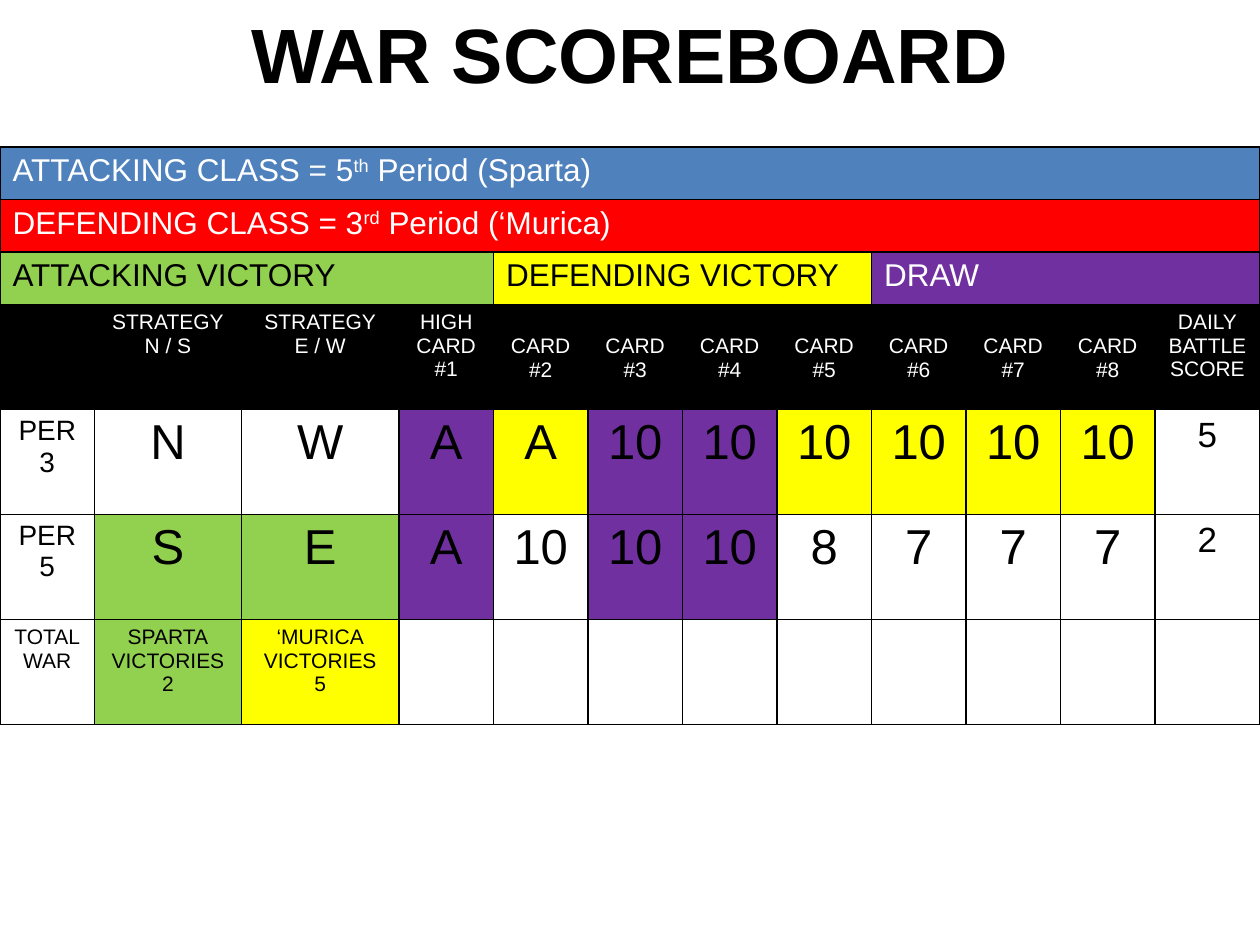
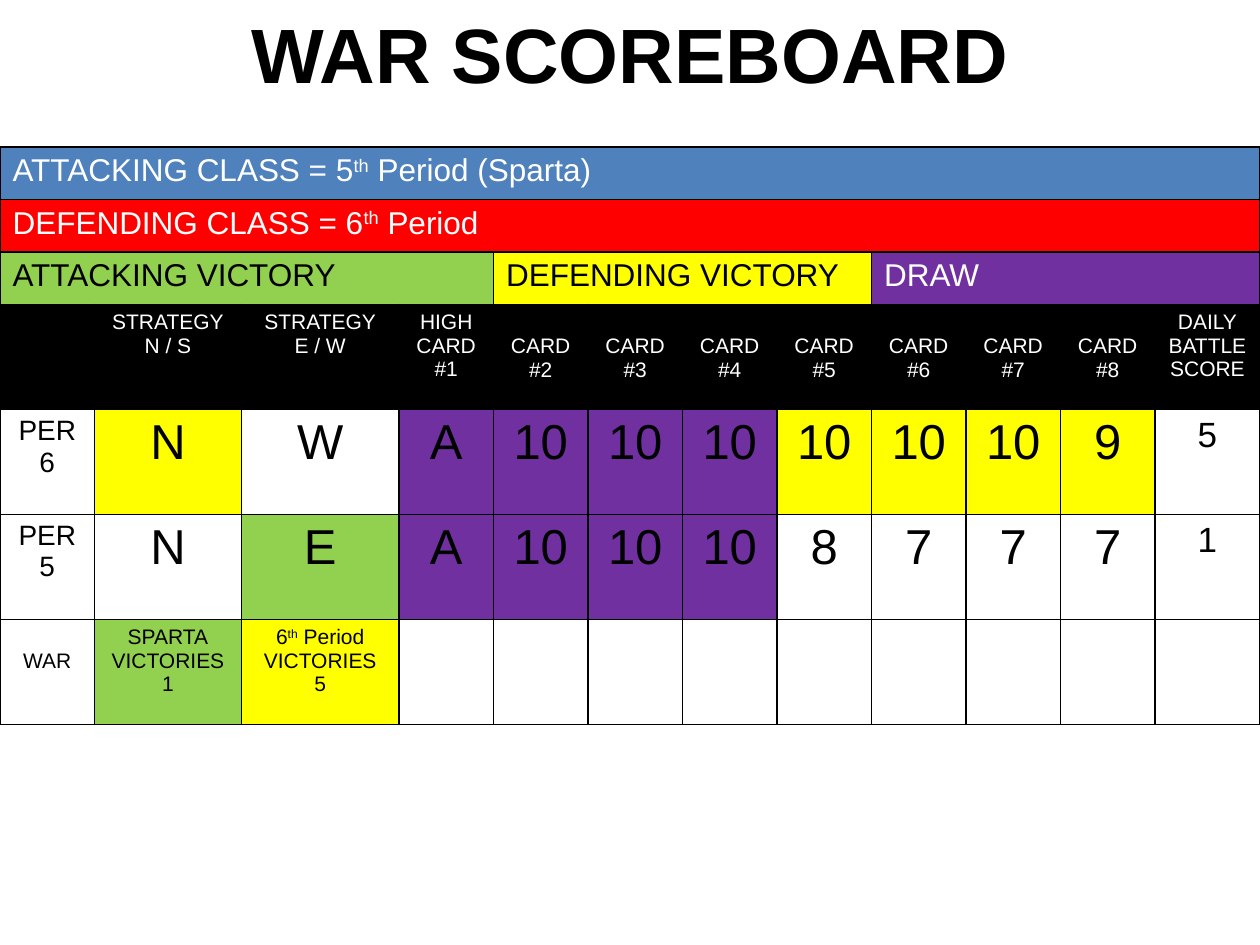
import pptx
import pptx.dml.color
import pptx.enum.text
import pptx.oxml
import pptx.oxml.ns
import pptx.util

PX = 7620
FONT = "Arial"
BLACK, WHITE, BLUE, RED = "000000", "FFFFFF", "4F81BD", "FF0000"
GREEN, YELLOW, PURPLE = "92D050", "FFFF00", "7030A0"
MARKS = {".": None, "G": GREEN, "Y": YELLOW, "P": PURPLE}
CENTER = pptx.enum.text.PP_ALIGN.CENTER
LEFT = pptx.enum.text.PP_ALIGN.LEFT

TITLE_BOX = (0, 0, 1200, 100)
BOARD_BOX = (0, 140, 1200, 550)
COLS = [90, 140, 150] + [90] * 8 + [100]
ROWS = [50] * 3 + [100] * 4
CELL_TOP, LINE = 6, 23
HEADINGS = (["", "STRATEGY\nN / S", "STRATEGY\nE / W", "HIGH\nCARD\n#1"]
            + [f"CARD\n#{n}" for n in range(2, 9)]
            + ["DAILY\nBATTLE\nSCORE"])

MATCHES = [
    {
        "attacker": "5^th^ Period (Sparta)",
        "defender": "3^rd^ Period (‘Murica)",
        "scores": [
            ("PER\n3", "N W A A 10 10 10 10 10 10", 5, "...PYPPYYYY."),
            ("PER\n5", "S E A 10 10 10 8 7 7 7", 2, ".GGP.PP....."),
        ],
        "total": ["TOTAL\nWAR", "SPARTA\nVICTORIES\n2", "‘MURICA\nVICTORIES\n5"],
        "total_drop": 0,
    },
    {
        "attacker": "5^th^ Period (Sparta)",
        "defender": "6^th^ Period",
        "scores": [
            ("PER\n6", "N W A 10 10 10 10 10 10 9", 5, ".Y.PPPPYYYY."),
            ("PER\n5", "N E A 10 10 10 8 7 7 7", 1, "..GPPPP....."),
        ],
        "total": ["WAR", "SPARTA\nVICTORIES\n1", "6^th^ Period\nVICTORIES\n5"],
        "total_drop": LINE,
    },
]


def px(n):
    return pptx.util.Emu(n * PX)


def rgb(color):
    return pptx.dml.color.RGBColor.from_string(color)


def write(tf, text, size, color=BLACK, align=CENTER, bold=False):
    for i, line in enumerate(text.split("\n")):
        p = tf.add_paragraph() if i else tf.paragraphs[0]
        p.alignment = align
        for j, part in enumerate(line.split("^")):
            r = p.add_run()
            r.text = part
            r.font.name = FONT
            r.font.size = pptx.util.Pt(size)
            r.font.bold = bold
            r.font.color.rgb = rgb(color)
            if j % 2:
                r._r.get_or_add_rPr().set("baseline", "30000")


def add_borders(cell):
    tcPr = cell._tc.get_or_add_tcPr()
    for side in ("lnL", "lnR", "lnT", "lnB"):
        tcPr.append(pptx.oxml.parse_xml(
            f'<a:{side} {pptx.oxml.ns.nsdecls("a")} w="12700"><a:solidFill>'
            f'<a:srgbClr val="{BLACK}"/></a:solidFill></a:{side}>'))


def fill_cell(cell, text, size, fill=None, color=BLACK, align=CENTER, drop=0):
    if fill:
        cell.fill.solid()
        cell.fill.fore_color.rgb = rgb(fill)
    if text:
        cell.margin_top = px(CELL_TOP + drop)
        write(cell.text_frame, text, size, color, align)


def add_title(s, box):
    sp = s.shapes.title
    sp.left, sp.top, sp.width, sp.height = map(px, box)
    tf = sp.text_frame
    tf.auto_size = pptx.enum.text.MSO_AUTO_SIZE.NONE
    tf.vertical_anchor = pptx.enum.text.MSO_ANCHOR.MIDDLE
    write(tf, "WAR SCOREBOARD", 44, bold=True)


def add_grid(s, box):
    table = s.shapes.add_table(len(ROWS), len(COLS), *map(px, box)).table
    table.first_row = table.horz_banding = False
    for col, width in zip(table.columns, COLS):
        col.width = px(width)
    for row, height in zip(table.rows, ROWS):
        row.height = px(height)
    for cell in table.iter_cells():
        add_borders(cell)
        cell.fill.background()
    return table


def add_bands(table, match):
    last = len(COLS) - 1
    bands = [
        (0, 0, last, "ATTACKING CLASS = " + match["attacker"], BLUE, WHITE),
        (1, 0, last, "DEFENDING CLASS = " + match["defender"], RED, WHITE),
        (2, 0, 3, "ATTACKING VICTORY", GREEN, BLACK),
        (2, 4, 7, "DEFENDING VICTORY", YELLOW, BLACK),
        (2, 8, last, "DRAW", PURPLE, WHITE),
    ]
    for row, start, end, text, fill, color in bands:
        table.cell(row, start).merge(table.cell(row, end))
        fill_cell(table.cell(row, start), text, 18, fill, color, LEFT)


def add_scoreboard(s, box, match):
    table = add_grid(s, box)
    add_bands(table, match)
    for c, heading in enumerate(HEADINGS):
        drop = LINE if heading.startswith("CARD") else 0
        fill_cell(table.cell(3, c), heading, 12, BLACK, WHITE, drop=drop)
    sizes = [16] + [28] * 10 + [20]
    for row, (period, plays, score, marks) in enumerate(match["scores"], 4):
        texts = [period, *plays.split(), str(score)]
        for c, (text, size, mark) in enumerate(zip(texts, sizes, marks)):
            fill_cell(table.cell(row, c), text, size, MARKS[mark])
    drops = [match["total_drop"], 0, 0]
    for c, (text, mark, drop) in enumerate(zip(match["total"], ".GY", drops)):
        fill_cell(table.cell(6, c), text, 12, MARKS[mark], drop=drop)


def main():
    prs = pptx.Presentation()
    prs.slide_width, prs.slide_height = px(1200), px(900)
    for match in MATCHES:
        s = prs.slides.add_slide(prs.slide_layouts[5])
        add_title(s, TITLE_BOX)
        add_scoreboard(s, BOARD_BOX, match)
    prs.save("out.pptx")


if __name__ == "__main__":
    main()
